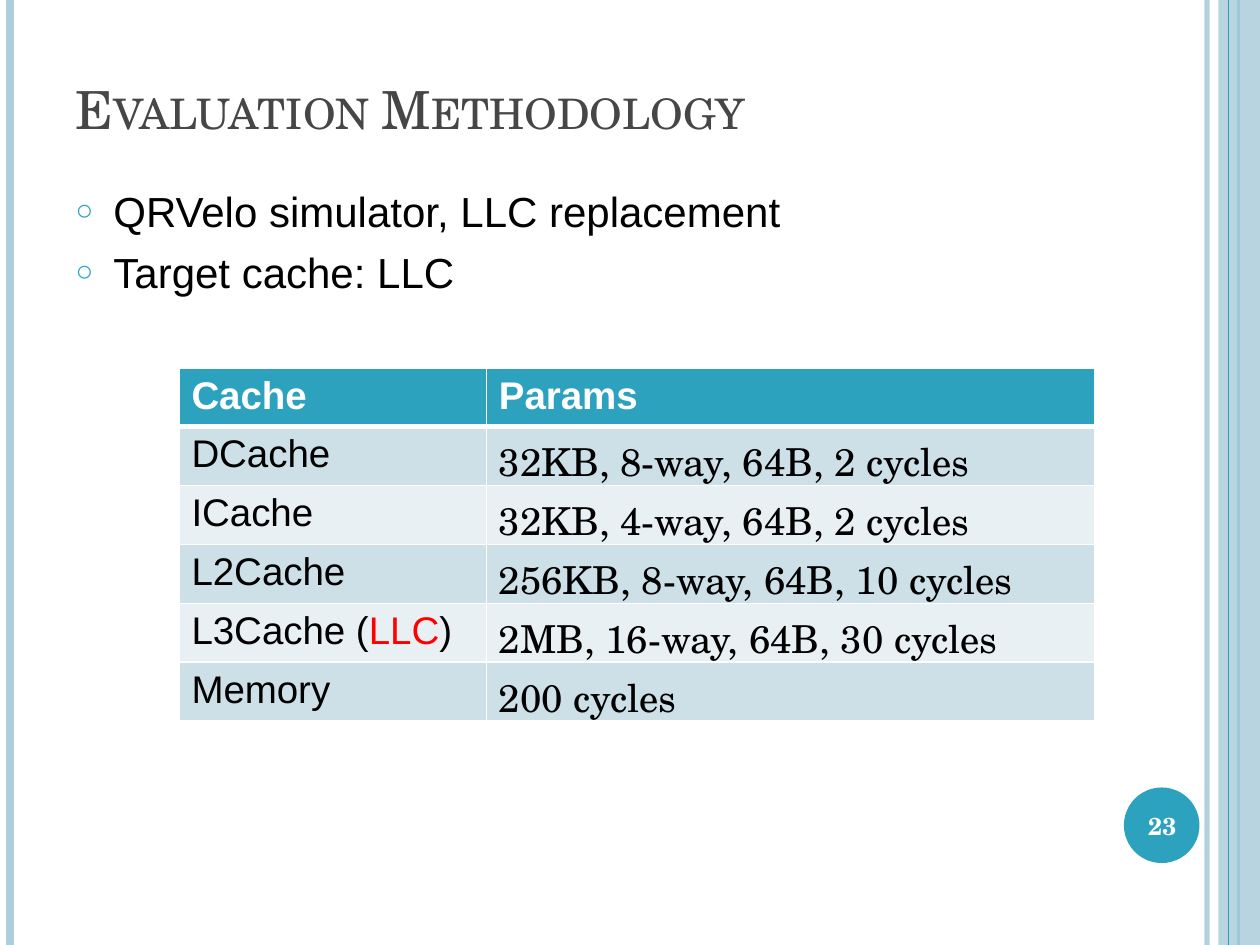
"""Build the evaluation methodology slide with its table of cache parameters."""
from lxml import etree
from pptx import Presentation
from pptx.dml.color import RGBColor
from pptx.enum import shapes, text
from pptx.oxml import ns
from pptx.util import Inches, Pt

TEAL = RGBColor(0x2D, 0xA2, 0xBF)
PALE = RGBColor(0xAD, 0xCE, 0xDC)
GRAY = RGBColor(0x46, 0x46, 0x46)
BLACK = RGBColor(0, 0, 0)
WHITE = RGBColor(255, 255, 255)
RED = RGBColor(255, 0, 0)
BANDS = [RGBColor(0xE8, 0xF0, 0xF4), RGBColor(0xCD, 0xE0, 0xE8)]
SANS = "Arial"
SERIF = "TeX Gyre Schola"


def add(node, tag, **attrs):
    return etree.SubElement(node, ns.qn(tag), attrs)


def style(par, face, size, color, bold=False):
    font = par.font
    font.name, font.size, font.bold = face, Pt(size), bold
    font.color.rgb = color


deck = Presentation()
deck.slide_width, deck.slide_height = Inches(10), Inches(7.5)
slide = deck.slides.add_slide(deck.slide_layouts[1])
items = slide.shapes

rules = []
for x, color, width in [(9.58, PALE, 3), (0.08, PALE, 4.5), (9.83, TEAL, 1.5), (9.75, TEAL, 0.75)]:
    if x == 9.75:
        side = items.add_shape(shapes.MSO_SHAPE.RECTANGLE, Inches(9.67), 0, Inches(0.33), Inches(7.5))
    rule = items.add_connector(shapes.MSO_CONNECTOR.STRAIGHT, Inches(x), 0, Inches(x), Inches(7.5))
    rule.line.color.rgb = color
    rule.line.width = Pt(width)
    add(rule._element.spPr, "a:effectLst")
    rules.append(rule)

disc = items.add_shape(shapes.MSO_SHAPE.OVAL, Inches(8.92), Inches(6.25), Inches(0.6), Inches(0.6))
for shape, color in [(side, PALE), (disc, TEAL)]:
    shape.shadow.inherit = False
    shape.fill.solid()
    shape.fill.fore_color.rgb = color
    shape.line.fill.background()
for shape, alpha in [(rules[0], 93), (side, 87)]:
    tint = shape._element.spPr.find(".//" + ns.qn("a:srgbClr"))
    add(tint, "a:alpha", val=str(alpha * 1000))

title = items.title
title.left, title.top, title.width, title.height = Inches(0.5), Inches(0.08), Inches(8.17), Inches(1.08)
frame = title.text_frame
frame.text = "Evaluation Methodology"
frame.vertical_anchor = text.MSO_ANCHOR.BOTTOM
par = frame.paragraphs[0]
par.alignment = text.PP_ALIGN.LEFT
style(par, SERIF, 30, GRAY)
par.runs[0].font._element.set("cap", "small")

body = slide.placeholders[1]
body.left, body.top, body.width, body.height = Inches(0.5), Inches(1.42), Inches(8.17), Inches(4)
body.text_frame.text = "QRVelo simulator, LLC replacement\nTarget cache: LLC"
for par in body.text_frame.paragraphs:
    par.space_before = Pt(6)
    props = par._p.get_or_add_pPr()
    props.set("marL", str(Inches(0.3)))
    props.set("indent", str(-Inches(0.3)))
    add(add(props, "a:buClr"), "a:srgbClr", val=str(TEAL))
    add(props, "a:buSzPct", val="70000")
    add(props, "a:buFont", typeface=SANS)
    add(props, "a:buChar", char="○")
    style(par, SANS, 24, BLACK)

page = items.add_textbox(Inches(8.89), Inches(6.27), Inches(0.67), Inches(0.57))
frame = page.text_frame
frame.word_wrap = True
frame.vertical_anchor = text.MSO_ANCHOR.MIDDLE
frame.text = "23"
frame.paragraphs[0].alignment = text.PP_ALIGN.CENTER
style(frame.paragraphs[0], SERIF, 14, WHITE, True)

rows = [
    (["Cache"], "Params"),
    (["DCache"], "32KB, 8-way, 64B, 2 cycles"),
    (["ICache"], "32KB, 4-way, 64B, 2 cycles"),
    (["L2Cache"], "256KB, 8-way, 64B, 10 cycles"),
    (["L3Cache (", "LLC", ")"], "2MB, 16-way, 64B, 30 cycles"),
    (["Memory"], "200 cycles"),
]
grid = items.add_table(len(rows), 2, Inches(1.42), Inches(2.92), Inches(7.27), Inches(2.8)).table
grid.columns[0].width, grid.columns[1].width = Inches(2.44), Inches(4.83)
for r, (name, value) in enumerate(rows):
    grid.rows[r].height = Inches(0.29)
    for c, parts in enumerate([name, [value]]):
        cell = grid.cell(r, c)
        par = cell.text_frame.paragraphs[0]
        for part in parts:
            run = par.add_run()
            run.text = part
            if part == "LLC":
                run.font.color.rgb = RED
        style(par, SERIF if r and c else SANS, 22, BLACK if r else WHITE, r == 0)
        props = cell._tc.get_or_add_tcPr()
        for edge in "LRTB":
            thick = (r, edge) in [(0, "B"), (1, "T")]
            line = add(props, "a:ln" + edge, w=str(Pt(3 if thick else 1)))
            add(add(line, "a:solidFill"), "a:srgbClr", val=str(WHITE))
        cell.fill.solid()
        cell.fill.fore_color.rgb = BANDS[r % 2] if r else TEAL

deck.save("out.pptx")
